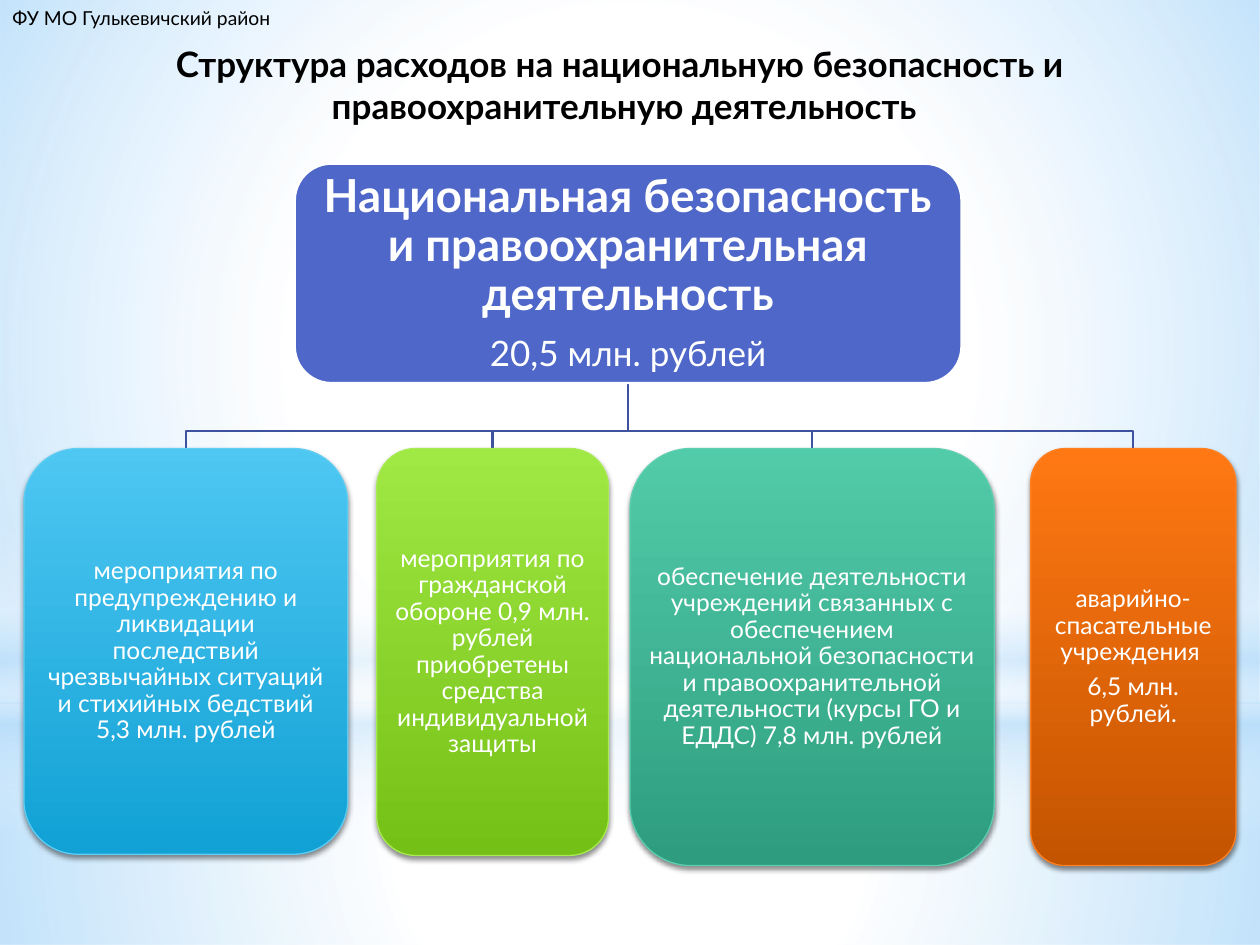
from lxml import etree
from pptx import Presentation
from pptx.dml.color import RGBColor
from pptx.enum.shapes import MSO_SHAPE
from pptx.enum.text import MSO_ANCHOR, MSO_AUTO_SIZE, PP_ALIGN
from pptx.oxml.ns import qn
from pptx.util import Inches, Pt

RECT, OVAL, ROUND = MSO_SHAPE.RECTANGLE, MSO_SHAPE.OVAL, MSO_SHAPE.ROUNDED_RECTANGLE
TOP, MIDDLE = MSO_ANCHOR.TOP, MSO_ANCHOR.MIDDLE
LEFT, CENTER = PP_ALIGN.LEFT, PP_ALIGN.CENTER
FIXED = MSO_AUTO_SIZE.NONE
FONT, WHITE, BLACK, SKY = "Lato", "FFFFFF", "000000", "B4DCFA"
HEAD = (2.34, 1.3, 5.29, 1.74)
ROW, BUS = 3.56, 3.42
GLOWS = [
    (RECT, (0, 5.58, 10, 1.92), [(0, WHITE, 91), (37, WHITE, 76), (100, SKY, 79)], None),
    (RECT, (0, 0, 10, 5.58), [(0, WHITE, 89), (48, WHITE, 62), (100, SKY, 79)], None),
    (RECT, (0, 4.12, 10, 2.5), [(0, WHITE, 0), (29, WHITE, 30), (45, SKY, 40),
                                (55, WHITE, 26), (65, SKY, 60), (100, WHITE, 0)], 90),
    (OVAL, (0, 1.75, 10, 5.58), [(0, WHITE, 100), (56, WHITE, 0)], None),
]
CARDS = [
    (0.19, 2.57, 3.22, "4EC7F2", "11A1D4", "5ECCF3",
     ["мероприятия по предупреждению и ликвидации последствий чрезвычайных "
      "ситуаций и стихийных бедствий 5,3 млн. рублей"]),
    (2.99, 1.84, 3.23, "A0E844", "75C016", "A7EA52",
     ["мероприятия по гражданской обороне 0,9 млн. рублей приобретены "
      "средства индивидуальной защиты"]),
    (5, 2.89, 3.31, "52CBA9", "2E9D7F", "5DCEAF",
     ["обеспечение деятельности учреждений связанных с обеспечением "
      "национальной безопасности и правоохранительной деятельности "
      "(курсы ГО и ЕДДС) 7,8 млн. рублей"]),
    (8.18, 1.63, 3.31, "FF7813", "C45400", "FF8021",
     ["аварийно-спасательные учреждения ", "6,5 млн. рублей."]),
]


def tint(color, code):
    """Set a colour format from a hex string."""
    color.rgb = RGBColor.from_string(code)


def node(parent, tag, **attrs):
    """Add a drawing element with the given attributes."""
    return etree.SubElement(parent, qn("a:" + tag), {k: str(v) for k, v in attrs.items()})


def shade(parent, code, alpha):
    """Add a colour with an opacity in percent."""
    node(node(parent, "srgbClr", val=code), "alpha", val=alpha * 1000)


def blend(shape, stops, angle=None):
    """Fill a shape with a linear gradient, or a round one without an angle."""
    grad = node(shape._element.spPr, "gradFill", rotWithShape=1)
    shape._element.spPr.insert(2, grad)
    marks = node(grad, "gsLst")
    for place, code, alpha in stops:
        shade(node(marks, "gs", pos=place * 1000), code, alpha)
    if angle is None:
        mid = dict.fromkeys("ltrb", 50000)
        node(node(grad, "path", path="circle"), "fillToRect", **mid)
    else:
        node(grad, "lin", ang=angle * 60000, scaled=0)


def cast(shape):
    """Give a shape a soft shadow below it."""
    effects = shape._element.spPr.find(qn("a:effectLst"))
    drop = node(effects, "outerShdw", blurRad=Pt(3.1), dist=Pt(1.8),
                dir=5400000, algn="ctr", rotWithShape=0)
    shade(drop, BLACK, 45)


def write(frame, text, size=14, color=WHITE, bold=False, align=CENTER, line=None, after=0):
    """Add a formatted paragraph to a text frame."""
    para = frame.paragraphs[0]
    if para.runs:
        para = frame.add_paragraph()
    para.alignment = align
    para.line_spacing = line
    para.space_before, para.space_after = Pt(0), Pt(after)
    run = para.add_run()
    run.text = text
    run.font.name, run.font.size, run.font.bold = FONT, Pt(size), bold
    tint(run.font.color, color)


def setup(frame, wrap, anchor, pad=None):
    """Set the wrapping, anchor and margins of a text frame."""
    frame.auto_size, frame.word_wrap = FIXED, wrap
    frame.vertical_anchor = anchor
    if pad is not None:
        frame.margin_left = frame.margin_right = Inches(pad)
        frame.margin_top = frame.margin_bottom = Inches(pad)


def panel(slide, kind, box):
    """Add a preset shape without a shadow."""
    shape = slide.shapes.add_shape(kind, *map(Inches, box))
    shape.shadow.inherit = False
    return shape


def border(shape, code, width):
    """Outline a shape."""
    tint(shape.line.color, code)
    shape.line.width = Pt(width)


def backdrop(slide):
    """Lay the translucent glows behind the content."""
    for kind, box, stops, angle in GLOWS:
        glow = panel(slide, kind, box)
        blend(glow, stops, angle)
        glow.line.fill.background()


def branch(slide, start, end):
    """Draw a bent line from the header down to a card."""
    points = [(start[0], BUS), (end[0], BUS), end]
    build = slide.shapes.build_freeform(*map(Inches, start))
    build.add_line_segments([tuple(map(Inches, spot)) for spot in points], close=False)
    path = build.convert_to_shape()
    path.shadow.inherit = False
    path.fill.background()
    border(path, "3E52A0", 1.25)


def header(slide, box):
    """Draw the top box with the total."""
    shape = panel(slide, ROUND, box)
    shape.fill.solid()
    tint(shape.fill.fore_color, "4E67C8")
    border(shape, WHITE, 1.25)
    frame = shape.text_frame
    setup(frame, True, MIDDLE, 0.02)
    write(frame, "Национальная безопасность и правоохранительная деятельность",
          size=26, bold=True, line=0.9, after=9)
    write(frame, "20,5 млн. рублей", size=20, line=0.9, after=7)


def card(slide, box, light, dark, edge, lines):
    """Draw one spending card."""
    shape = panel(slide, ROUND, box)
    blend(shape, [(0, light, 100), (100, dark, 100)], 90)
    border(shape, edge, 0.75)
    cast(shape)
    setup(shape.text_frame, True, MIDDLE, 0.01)
    for text in lines:
        write(shape.text_frame, text, line=0.9, after=5)


def chart(slide, box):
    """Draw the header, its branches and the cards."""
    left, top, width, height = box
    start = (left + width / 2, top + height)
    for x, wide, *_ in CARDS:
        branch(slide, start, (x + wide / 2, ROW))
    header(slide, box)
    for x, wide, tall, *rest in CARDS:
        card(slide, (x, ROW, wide, tall), *rest)


def label(slide, box):
    """Write the name of the office in the corner."""
    frame = slide.shapes.add_textbox(*map(Inches, box)).text_frame
    setup(frame, False, TOP)
    write(frame, "ФУ МО Гулькевичский район", size=11, color=BLACK, align=LEFT)


def heading(slide, box):
    """Place the title above the backdrop."""
    title = slide.shapes.title
    title.left, title.top, title.width, title.height = map(Inches, box)
    setup(title.text_frame, False, TOP)
    for text in ("Структура расходов на национальную безопасность и ",
                 "правоохранительную деятельность"):
        write(title.text_frame, text, size=20, color=BLACK, bold=True)
    slide.shapes._spTree.append(title._element)


def main():
    """Build and save the slide."""
    deck = Presentation()
    deck.slide_width, deck.slide_height = Inches(10), Inches(7.5)
    slide = deck.slides.add_slide(deck.slide_layouts[5])
    slide.background.fill.solid()
    tint(slide.background.fill.fore_color, WHITE)
    backdrop(slide)
    chart(slide, HEAD)
    label(slide, (0, 0, 2.25, 0.29))
    heading(slide, (1.13, 0.29, 7.65, 0.77))
    deck.save("out.pptx")


if __name__ == "__main__":
    main()
